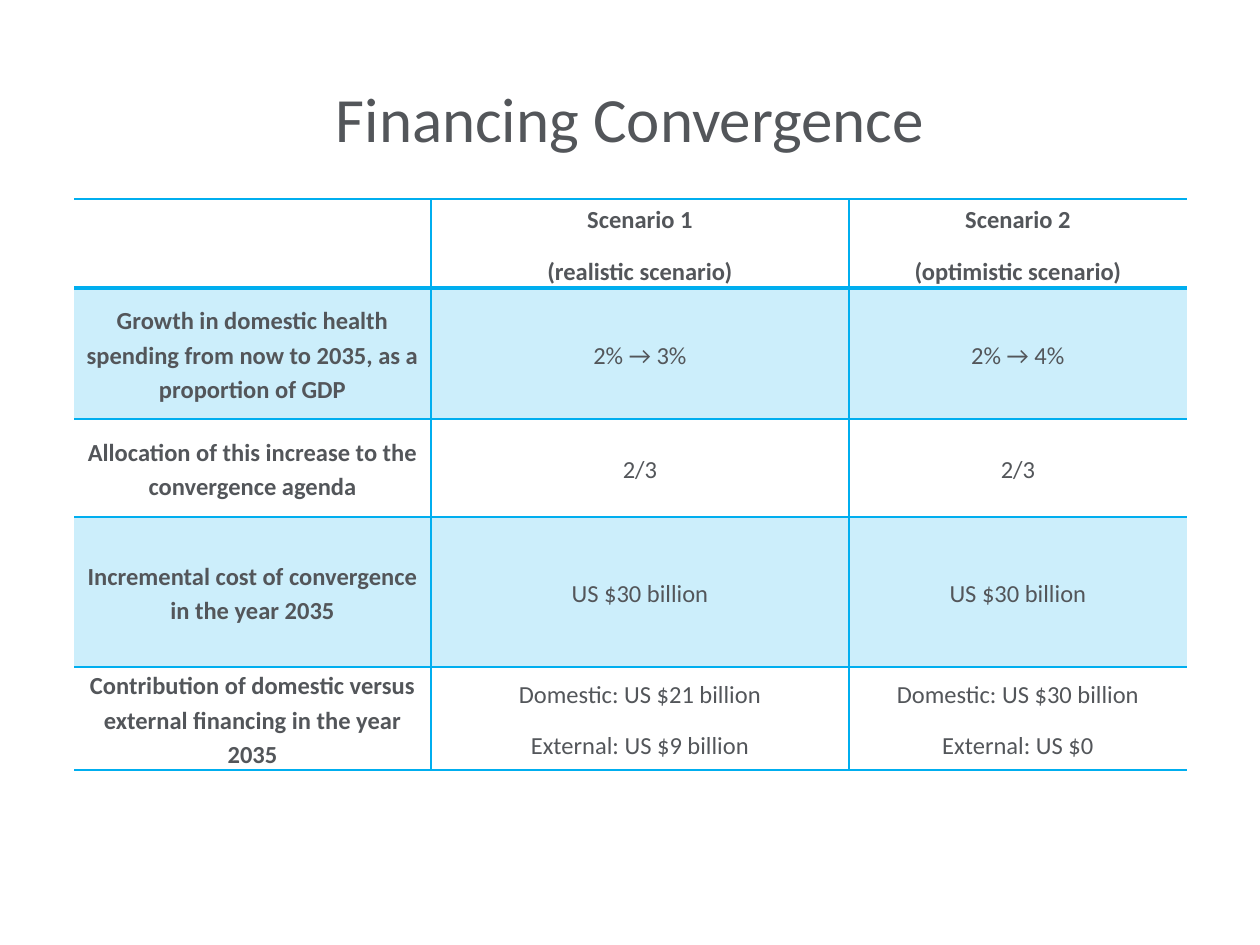
"""Build the Financing Convergence slide with its scenario table."""
from dataclasses import dataclass

from lxml.etree import SubElement
from pptx import Presentation
from pptx.dml.color import RGBColor
from pptx.enum.text import MSO_ANCHOR, PP_ALIGN
from pptx.oxml.ns import qn
from pptx.util import Emu, Pt

COLORS = {"text": "53565A", "blue": "00AEEF"}
FONT = "Calibri"
COLS = [357, 418, 338]


def px(count: int) -> Emu:
    """Turn pixels into EMU."""
    return Emu(round(count * 914400 / 126))


@dataclass
class Row:
    """Hold one table row."""
    height: int
    texts: tuple[str, str, str]
    head: bool = False
    tint: bool = False


ROWS = [
    Row(89, ("", "Scenario 1\n(realistic scenario)",
             "Scenario 2\n(optimistic scenario)"), head=True),
    Row(131, ("Growth in domestic health spending from now to 2035, "
              "as a proportion of GDP", "2% → 3%", "2% → 4%"), tint=True),
    Row(98, ("Allocation of this increase to the convergence agenda",
             "2/3", "2/3")),
    Row(150, ("Incremental cost of convergence in the year 2035",
              "US $30 billion", "US $30 billion"), tint=True),
    Row(98, ("Contribution of domestic versus external financing "
             "in the year 2035",
             "Domestic: US $21 billion\nExternal: US $9 billion",
             "Domestic: US $30 billion\nExternal: US $0")),
]


def style(frame, size: int, bold: bool) -> None:
    """Centre the text and format its runs."""
    for para in frame.paragraphs:
        para.alignment = PP_ALIGN.CENTER
        for run in para.runs:
            run.font.name = FONT
            run.font.size = Pt(size)
            run.font.bold = bold
            run.font.color.rgb = RGBColor.from_string(COLORS["text"])


def edge(cell, side: str, width: int) -> None:
    """Draw one cell border, or clear it when the width is zero."""
    line = SubElement(cell._tc.get_or_add_tcPr(), qn(f"a:ln{side}"))
    if width:
        line.set("w", str(Pt(width)))
        fill = SubElement(line, qn("a:solidFill"))
        SubElement(fill, qn("a:srgbClr"), val=COLORS["blue"])
    else:
        SubElement(line, qn("a:noFill"))


def paint(cell, tint: bool) -> None:
    """Fill a cell with pale blue or leave it clear."""
    if not tint:
        cell.fill.background()
        return
    cell.fill.solid()
    cell.fill.fore_color.rgb = RGBColor.from_string(COLORS["blue"])
    color = cell._tc.tcPr.find(f"{qn('a:solidFill')}/{qn('a:srgbClr')}")
    SubElement(color, qn("a:alpha"), val="20000")


def draw_cell(cell, row: Row, col: int, above: int) -> None:
    """Write and format one cell."""
    cell.vertical_anchor = MSO_ANCHOR.MIDDLE
    cell.margin_left = cell.margin_right = px(9)
    cell.margin_top = cell.margin_bottom = 0
    cell.text_frame.text = row.texts[col]
    style(cell.text_frame, 14, row.head or col == 0)
    for para in cell.text_frame.paragraphs:
        para.line_spacing = 1.15
        para.space_after = Pt(10)
    edge(cell, "L", 1 if col else 0)
    edge(cell, "R", 1 if col < len(COLS) - 1 else 0)
    edge(cell, "T", above)
    edge(cell, "B", 2 if row.head else 1)
    paint(cell, row.tint)


def draw_table(slide) -> None:
    """Draw the scenario table."""
    high = sum(row.height for row in ROWS)
    table = slide.shapes.add_table(
        len(ROWS), len(COLS), px(74), px(199), px(sum(COLS)), px(high)).table
    table.horz_banding = False
    for col, width in enumerate(COLS):
        table.columns[col].width = px(width)
    above = 1
    for num, row in enumerate(ROWS):
        table.rows[num].height = px(row.height)
        for col in range(len(COLS)):
            draw_cell(table.cell(num, col), row, col, above)
        above = 2 if row.head else 1


def draw_title(slide) -> None:
    """Place and format the title."""
    title = slide.shapes.title
    title.left, title.top = px(63), px(38)
    title.width, title.height = px(1134), px(158)
    title.text_frame.text = "Financing Convergence"
    title.text_frame.vertical_anchor = MSO_ANCHOR.MIDDLE
    style(title.text_frame, 36, False)


def main() -> None:
    """Build and save the deck."""
    deck = Presentation()
    deck.slide_width, deck.slide_height = px(1260), px(945)
    slide = deck.slides.add_slide(deck.slide_layouts[5])
    draw_title(slide)
    draw_table(slide)
    deck.save("out.pptx")


if __name__ == "__main__":
    main()
